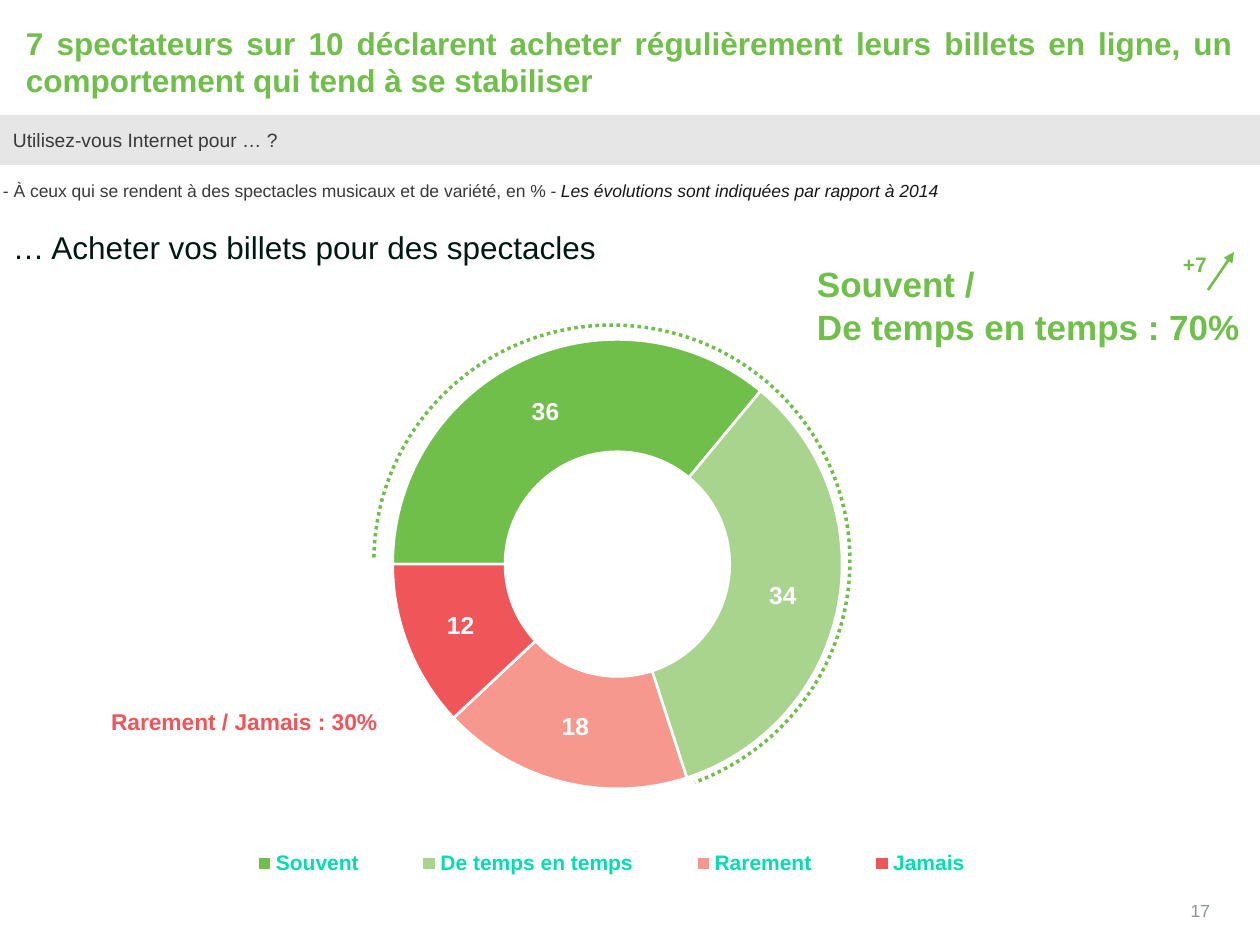
from lxml import etree
from pptx import Presentation
from pptx.chart.data import CategoryChartData
from pptx.dml.color import RGBColor
from pptx.enum.chart import XL_CHART_TYPE as Chart, XL_LEGEND_POSITION as LegendPos
from pptx.enum.dml import MSO_LINE as Dash
from pptx.enum.shapes import MSO_CONNECTOR as Link, MSO_SHAPE as Shape
from pptx.enum.text import MSO_ANCHOR as Anchor, PP_ALIGN as Align
from pptx.oxml import parse_xml
from pptx.oxml.ns import nsdecls, qn
from pptx.util import Pt

PX = 914400 / 126
FONT = "Arial"
COLORS = {
    "green": "70BF4A", "souvent": "6FBF4A", "temps": "A9D48D",
    "rarement": "F6988E", "jamais": "F05559", "legend": "03DDB0",
    "band": "E6E6E6", "question": "3B3838", "note": "181717",
    "heading": "001813", "number": "8C9491", "white": "FFFFFF",
}
ANSWERS = [
    ("Souvent", 36, "souvent"),
    ("De temps en temps", 34, "temps"),
    ("Rarement", 18, "rarement"),
    ("Jamais", 12, "jamais"),
]


def px(*lengths):
    return [round(length * PX) for length in lengths]


def rgb(name):
    return RGBColor.from_string(COLORS[name])


def style(font, size, color, bold=False, italic=False):
    font.name, font.size, font.bold, font.italic = FONT, Pt(size), bold, italic
    font.color.rgb = rgb(color)


def write(shape, paragraphs, anchor=Anchor.TOP, align=Align.LEFT,
          insets=(13, 6, 13, 6), wrap=True):
    frame = shape.text_frame
    frame.word_wrap, frame.vertical_anchor = wrap, anchor
    (frame.margin_left, frame.margin_top,
     frame.margin_right, frame.margin_bottom) = px(*insets)
    for index, runs in enumerate(paragraphs):
        paragraph = frame.paragraphs[0] if index == 0 else frame.add_paragraph()
        paragraph.alignment = align
        for words, *look in runs:
            run = paragraph.add_run()
            run.text = words
            style(run.font, *look)


def add_text(slide, box, paragraphs, **layout):
    write(slide.shapes.add_textbox(*px(*box)), paragraphs, **layout)


def add_band(slide, box, paragraphs):
    band = slide.shapes.add_shape(Shape.RECTANGLE, *px(*box))
    band.shadow.inherit = False
    band.fill.solid()
    band.fill.fore_color.rgb = rgb("band")
    band.line.fill.background()
    write(band, paragraphs, Anchor.MIDDLE, Align.JUSTIFY, (13, 13, 25, 13))


def add_dotted_arc(slide, box, start, end):
    arc = slide.shapes.add_shape(Shape.ARC, *px(*box))
    arc.shadow.inherit = False
    arc.fill.background()
    arc.adjustments[0], arc.adjustments[1] = start * 0.6, end * 0.6
    arc.line.color.rgb = rgb("green")
    arc.line.width = Pt(2)
    arc.line.dash_style = Dash.ROUND_DOT


def add_arrow(slide, ends):
    arrow = slide.shapes.add_connector(Link.STRAIGHT, *px(*ends))
    arrow.line.color.rgb = rgb("green")
    arrow.line.width = Pt(1.5)
    outline = arrow._element.spPr.find(qn("a:ln"))
    etree.SubElement(outline, qn("a:tailEnd"), type="triangle")
    etree.SubElement(arrow._element.spPr, qn("a:effectLst"))


def manual_layout(x, y, w, h, inner=False):
    target = '<c:layoutTarget val="inner"/>' if inner else ""
    return parse_xml(
        f'<c:layout {nsdecls("c")}><c:manualLayout>{target}'
        '<c:xMode val="edge"/><c:yMode val="edge"/>'
        f'<c:x val="{x}"/><c:y val="{y}"/><c:w val="{w}"/><c:h val="{h}"/>'
        '</c:manualLayout></c:layout>')


def place(parent, layout, before):
    for old in parent.findall(qn("c:layout")):
        parent.remove(old)
    parent.find(qn(before)).addprevious(layout)


def add_doughnut(slide, box, answers):
    data = CategoryChartData()
    data.categories = [label for label, _, _ in answers]
    data.add_series("Series 1", [value for _, value, _ in answers])
    chart = slide.shapes.add_chart(Chart.DOUGHNUT, *px(*box), data).chart
    chart.has_title = False
    style(chart.font, 10, "heading")

    chart.has_legend = True
    chart.legend.position = LegendPos.BOTTOM
    chart.legend.include_in_layout = False
    style(chart.legend.font, 12, "legend", True)

    plot = chart.plots[0]
    plot.vary_by_categories = True
    plot.has_data_labels = True
    plot.data_labels.show_value = True
    plot.data_labels.show_percentage = False
    style(plot.data_labels.font, 14, "white", True)
    for index, (_, _, color) in enumerate(answers):
        slice_format = plot.series[0].points[index].format
        slice_format.fill.solid()
        slice_format.fill.fore_color.rgb = rgb(color)
        slice_format.line.color.rgb = rgb("white")
        slice_format.line.width = Pt(1.5)

    ring = chart._chartSpace.find(".//" + qn("c:doughnutChart"))
    ring.find(qn("c:firstSliceAng")).set("val", "270")
    ring.find(qn("c:holeSize")).set("val", "50")
    place(ring.getparent(), manual_layout(0.24, 0.08, 0.49, 0.66, True), "c:doughnutChart")
    place(chart.legend._element, manual_layout(0.13, 0.82, 0.7, 0.06), "c:overlay")


def main():
    deck = Presentation()
    deck.slide_width, deck.slide_height = px(1260, 945)
    slide = deck.slides.add_slide(deck.slide_layouts[6])
    flush = (0, 0, 0, 0)

    add_text(slide, (26, 17, 1207, 89),
             [[("7 spectateurs sur 10 déclarent acheter régulièrement leurs billets "
                "en ligne, un comportement qui tend à se stabiliser", 18, "green", True)]],
             anchor=Anchor.MIDDLE, align=Align.JUSTIFY, insets=flush)
    add_text(slide, (1155, 891, 55, 30), [[("17", 10, "number")]],
             anchor=Anchor.BOTTOM, align=Align.RIGHT, insets=flush)
    add_band(slide, (0, 115, 1260, 50),
             [[("Utilisez-vous Internet pour … ?", 11, "question")]])
    add_text(slide, (-10, 174, 993, 34),
             [[("- À ceux qui se rendent à des spectacles musicaux et de variété, en % - ",
                10, "question"),
               ("Les évolutions sont indiquées par rapport à 2014",
                10, "note", False, True)]])
    add_doughnut(slide, (49, 285, 1172, 681), ANSWERS)
    add_text(slide, (804, 280, 456, 118),
             [[("Souvent /", 20, "souvent", True)],
              [("De temps en temps : 70%", 20, "souvent", True)]],
             anchor=Anchor.MIDDLE, insets=(13, 6, 13, 74))
    add_dotted_arc(slide, (374, 325, 476, 472), 180.84, 69.43)
    add_text(slide, (0, 222, 614, 50),
             [[("… Acheter vos billets pour des spectacles", 18, "heading")]], wrap=False)
    add_text(slide, (88, 675, 302, 118),
             [[("Rarement / Jamais : 30%", 13, "jamais", True)]],
             anchor=Anchor.MIDDLE, align=Align.RIGHT, insets=(13, 6, 13, 31))
    add_arrow(slide, (1208, 290, 1234, 252))
    add_text(slide, (1183, 252, 28, 25), [[("+7", 12, "green", True)]], insets=flush)
    deck.save("out.pptx")


if __name__ == "__main__":
    main()
